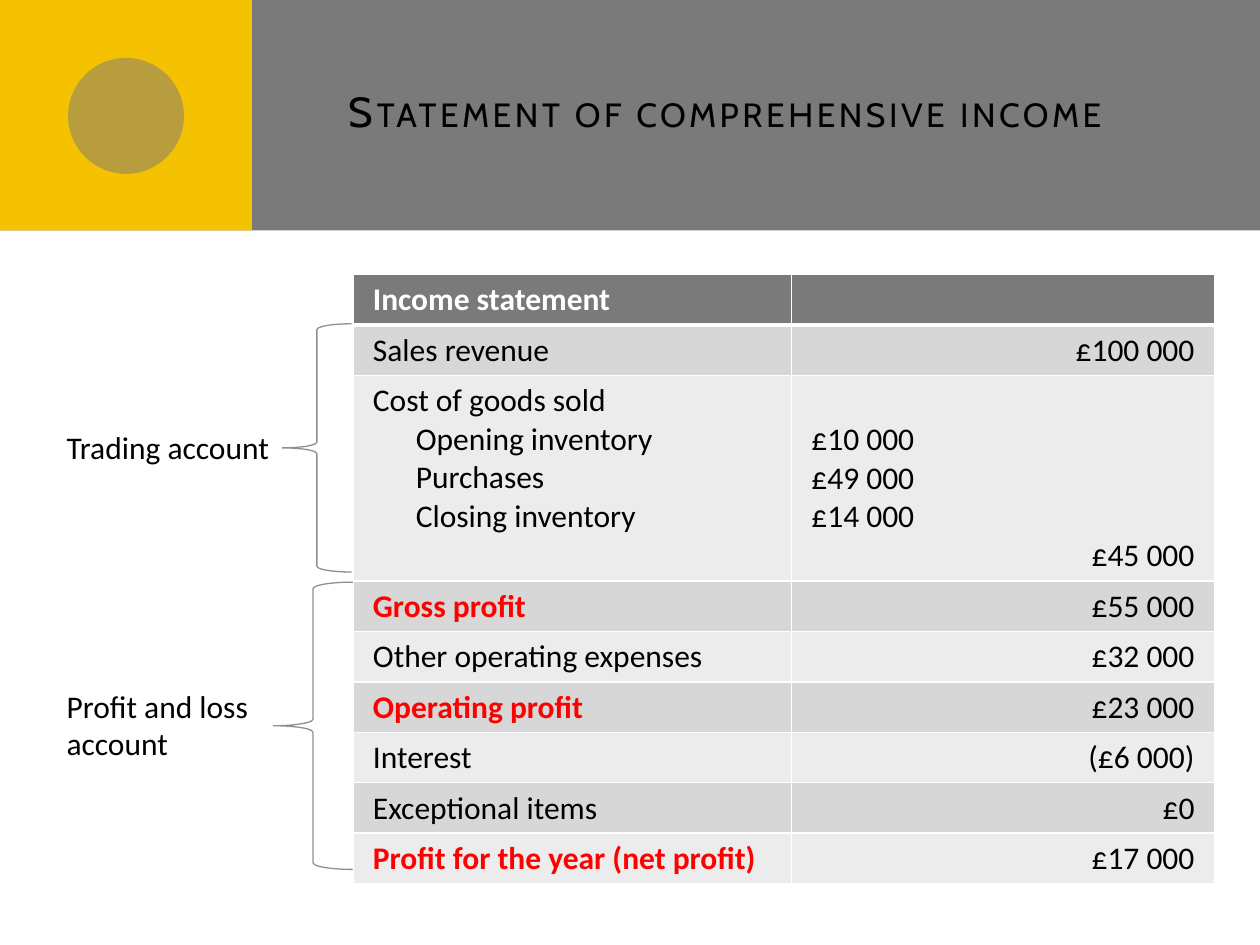
from lxml.etree import SubElement
from pptx import Presentation
from pptx.dml.color import RGBColor
from pptx.enum.shapes import MSO_SHAPE as Shape
from pptx.enum.text import MSO_ANCHOR as Anchor, PP_ALIGN as Align
from pptx.oxml.ns import qn
from pptx.util import Inches, Pt

COLORS = {"gray": "7A7A7A", "yellow": "F5C201", "line": "8F8F8F", "dark band": "D7D7D7",
          "light band": "ECECEC", "black": "000000", "white": "FFFFFF", "red": "FF0000"}

presentation = Presentation()
presentation.slide_width, presentation.slide_height = Inches(10), Inches(7.5)
slide = presentation.slides.add_slide(presentation.slide_layouts[6])

# Grid of 100 columns by 75 rows
column = presentation.slide_width / 100
row = presentation.slide_height / 75


def place(left, top, width, height):
    return int(left * column), int(top * row), int(width * column), int(height * row)


def style(paragraph, color, size=18, name="Calibri", bold=False):
    font = paragraph.font
    font.name, font.size, font.bold = name, Pt(size), bold
    font.color.rgb = RGBColor.from_string(COLORS[color])


# Banner: gray band, yellow block, translucent circle
for kind, area, color in [(Shape.RECTANGLE, (0, 0, 100, 18.3), "gray"),
                          (Shape.RECTANGLE, (0, 0, 20, 18.3), "yellow"),
                          (Shape.OVAL, (5.4, 4.6, 9.2, 9.2), "gray")]:
    shape = slide.shapes.add_shape(kind, *place(*area))
    shape.shadow.inherit = False
    shape.fill.solid()
    shape.fill.fore_color.rgb = RGBColor.from_string(COLORS[color])
    shape.line.fill.background()
circle_color = shape.fill._xPr.find(qn("a:solidFill"))[0]
SubElement(circle_color, qn("a:alpha"), val="50000")

# Title and the labels of the two accounts
for text, area, size, name in [
        ("Statement of comprehensive income", (26.7, 2.5, 68.3, 12.5), 24, "Cabin"),
        ("Trading account", (4.3, 33.5, 19.7, 4), 18, "Calibri"),
        ("Profit and loss account", (4.3, 54, 18.1, 7.1), 18, "Calibri")]:
    frame = slide.shapes.add_textbox(*place(*area)).text_frame
    frame.word_wrap = True
    paragraph = frame.paragraphs[0]
    paragraph.text = text
    style(paragraph, "black", size, name)
    if name == "Cabin":
        frame.vertical_anchor = Anchor.MIDDLE
        properties = paragraph.runs[0].font._element
        properties.set("cap", "small")
        properties.set("spc", "200")

# Income statement: label lines, amount lines
statement = [
    (["Income statement"], []),
    (["Sales revenue"], ["£100 000"]),
    (["Cost of goods sold", "Opening inventory", "Purchases", "Closing inventory"],
     ["£10 000", "£49 000", "£14 000", "£45 000"]),
    (["Gross profit"], ["£55 000"]),
    (["Other operating expenses"], ["£32 000"]),
    (["Operating profit"], ["£23 000"]),
    (["Interest"], ["(£6 000)"]),
    (["Exceptional items"], ["£0"]),
    (["Profit for the year (net profit)"], ["£17 000"]),
]
profits = {"Gross profit", "Operating profit", "Profit for the year (net profit)"}

table = slide.shapes.add_table(len(statement), 2, *place(28, 21.8, 68.4, 48.4)).table
for table_column, width in zip(table.columns, (34.8, 33.6)):
    table_column.width = int(width * column)

for row_index, entry in enumerate(statement):
    is_header = row_index == 0
    has_details = len(entry[0]) > 1
    table.rows[row_index].height = int((16.3 if has_details else 4) * row)
    band = "gray" if is_header else ("dark band" if row_index % 2 else "light band")
    for column_index, lines in enumerate(entry):
        cell = table.cell(row_index, column_index)
        cell.margin_left = cell.margin_right = int(1.6 * column)
        cell.margin_top = cell.margin_bottom = int(0.5 * row)
        is_amount = column_index == 1
        if is_amount:
            cell.vertical_anchor = Anchor.BOTTOM
        cell.text = "\n".join(lines)
        for line_index, paragraph in enumerate(cell.text_frame.paragraphs):
            is_profit = paragraph.text in profits
            color = "white" if is_header else ("red" if is_profit else "black")
            style(paragraph, color, bold=is_header or is_profit)
            if is_amount and line_index == len(lines) - 1:
                paragraph.alignment = Align.RIGHT
            elif not is_amount and line_index > 0:
                paragraph._p.get_or_add_pPr().set("marL", str(int(3.4 * column)))

        # White cell borders, heavier below the header, then the fill
        cell_properties = cell._tc.get_or_add_tcPr()
        for side in ("lnL", "lnR", "lnT", "lnB"):
            heavy = (side == "lnB" and is_header) or (side == "lnT" and row_index == 1)
            border = SubElement(cell_properties, qn(f"a:{side}"), w=str(Pt(3 if heavy else 1)))
            SubElement(SubElement(border, qn("a:solidFill")), qn("a:srgbClr"), val=COLORS["white"])
        cell.fill.solid()
        cell.fill.fore_color.rgb = RGBColor.from_string(COLORS[band])

# Braces that join the labels to the table rows
for area in [(22.4, 25.7, 5.5, 19.7), (21.7, 46.2, 6.3, 22.8)]:
    brace = slide.shapes.add_shape(Shape.LEFT_BRACE, *place(*area))
    brace.shadow.inherit = False
    brace.fill.background()
    brace.line.color.rgb = RGBColor.from_string(COLORS["line"])
    brace.line.width = Pt(0.75)

presentation.save("out.pptx")
